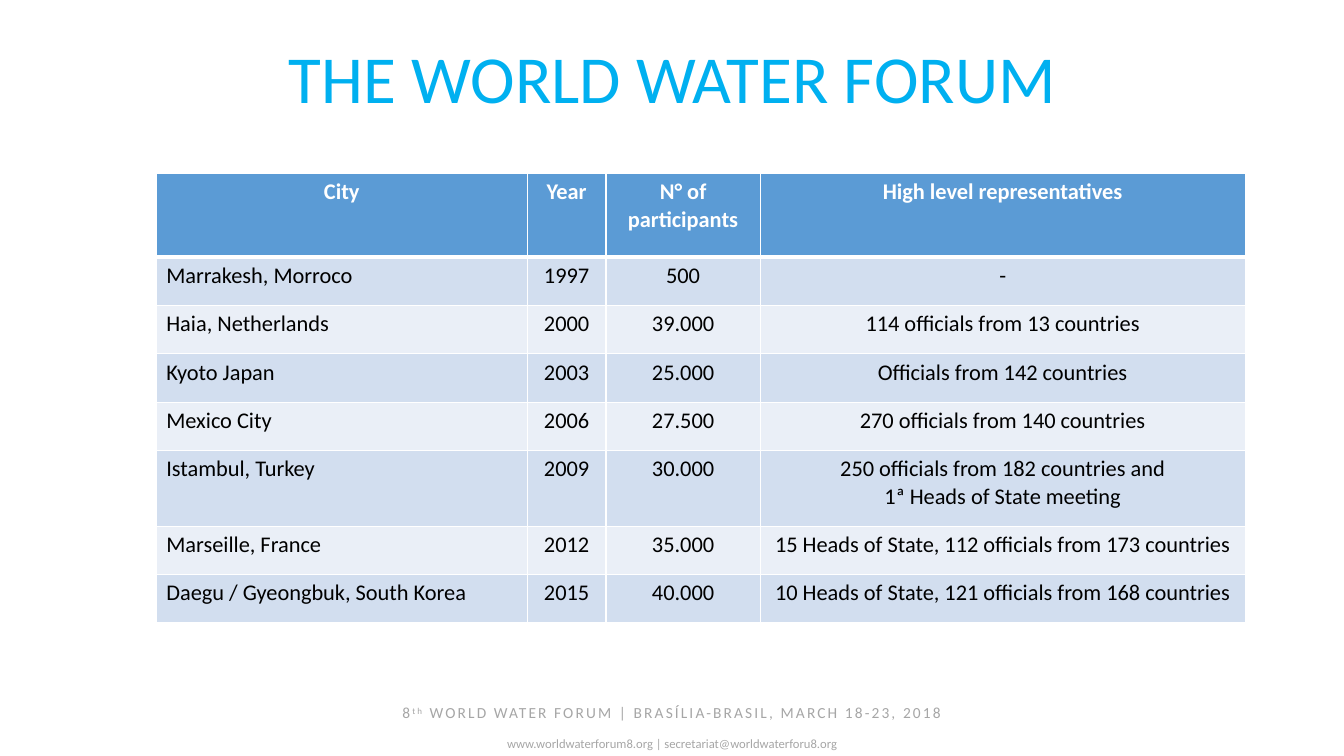
from dataclasses import dataclass

from lxml.etree import SubElement
from pptx import Presentation
from pptx.dml.color import RGBColor
from pptx.enum.text import MSO_ANCHOR as Anchor, PP_ALIGN as Align
from pptx.oxml.ns import qn
from pptx.util import Inches, Pt

COLORS = {
    "title": "00B0F0",
    "header": "5B9BD5",
    "dark_band": "D2DEEF",
    "light_band": "EAEFF7",
    "white": "FFFFFF",
    "black": "000000",
    "footer": "A6A6A6",
}
COLUMN_WIDTHS = (3.68, 0.78, 1.53, 4.81)
HEADINGS = ("City", "Year", "N° of participants", "High level representatives")
HEADER_HEIGHT = 0.83


@dataclass(frozen=True)
class Forum:
    city: str
    year: str
    participants: str
    representatives: str
    height: float = 0.48


FORUMS = (
    Forum("Marrakesh, Morroco", "1997", "500", "-"),
    Forum("Haia, Netherlands", "2000", "39.000", "114 officials from 13 countries"),
    Forum("Kyoto Japan", "2003", "25.000", "Officials from 142 countries"),
    Forum("Mexico City", "2006", "27.500", "270 officials from 140 countries"),
    Forum("Istambul, Turkey", "2009", "30.000",
          "250 officials from 182 countries and\n1ª Heads of State meeting", 0.75),
    Forum("Marseille, France", "2012", "35.000",
          "15 Heads of State, 112 officials from 173 countries"),
    Forum("Daegu / Gyeongbuk, South Korea", "2015", "40.000",
          "10 Heads of State, 121 officials from 168 countries"),
)


def add_run(paragraph, text: str, *, size: float, color: str, bold: bool = False,
            spacing: float = 0, baseline: int = 0) -> None:
    run = paragraph.add_run()
    run.text = text
    run.font.name = "Calibri"
    run.font.size = Pt(size)
    run.font.bold = bold
    run.font.color.rgb = RGBColor.from_string(COLORS[color])
    properties = run._r.get_or_add_rPr()
    if spacing:
        properties.set("spc", str(round(spacing * 100)))
    if baseline:
        properties.set("baseline", str(baseline * 1000))


def add_text_frame(slide, left: float, top: float, width: float, height: float):
    box = slide.shapes.add_textbox(Inches(left), Inches(top), Inches(width), Inches(height))
    box.text_frame.word_wrap = True
    box.text_frame.vertical_anchor = Anchor.TOP
    box.text_frame.paragraphs[0].alignment = Align.CENTER
    return box.text_frame


def add_border(cell, side: str, width: float) -> None:
    line = SubElement(cell._tc.get_or_add_tcPr(), qn(f"a:ln{side}"), w=str(Pt(width)))
    fill = SubElement(line, qn("a:solidFill"))
    SubElement(fill, qn("a:srgbClr"), val=COLORS["white"])


def fill_cell(cell, text: str, *, fill: str, color: str, align: Align,
              bold: bool = False, top: float = 1, bottom: float = 1) -> None:
    for side, width in (("L", 1), ("R", 1), ("T", top), ("B", bottom)):
        add_border(cell, side, width)
    cell.fill.solid()
    cell.fill.fore_color.rgb = RGBColor.from_string(COLORS[fill])
    cell.vertical_anchor = Anchor.TOP
    for index, line in enumerate(text.split("\n")):
        frame = cell.text_frame
        paragraph = frame.add_paragraph() if index else frame.paragraphs[0]
        paragraph.alignment = align
        add_run(paragraph, line, size=16, color=color, bold=bold)


def add_forum_table(slide) -> None:
    heights = (HEADER_HEIGHT, *(forum.height for forum in FORUMS))
    table = slide.shapes.add_table(
        len(heights), len(COLUMN_WIDTHS), Inches(1.55), Inches(1.72),
        Inches(sum(COLUMN_WIDTHS)), Inches(sum(heights))).table
    for column, width in zip(table.columns, COLUMN_WIDTHS):
        column.width = Inches(width)
    for row, height in zip(table.rows, heights):
        row.height = Inches(height)
    for column, heading in enumerate(HEADINGS):
        fill_cell(table.cell(0, column), heading, fill="header", color="white",
                  align=Align.CENTER, bold=True, bottom=3)
    for row, forum in enumerate(FORUMS, start=1):
        values = (forum.city, forum.year, forum.participants, forum.representatives)
        for column, value in enumerate(values):
            fill_cell(table.cell(row, column), value,
                      fill="dark_band" if row % 2 else "light_band", color="black",
                      align=Align.CENTER if column else Align.LEFT,
                      top=3 if row == 1 else 1)


def add_footer(slide) -> None:
    frame = add_text_frame(slide, 0, 6.93, 13.33, 0.57)
    event = frame.paragraphs[0]
    for text, baseline in (("8", 0), ("th", 30),
                           (" WORLD WATER FORUM | BRASÍLIA-BRASIL, MARCH 18-23, 2018", 0)):
        add_run(event, text, size=11, color="footer", spacing=1.5, baseline=baseline)
    contact = frame.add_paragraph()
    contact.alignment = Align.CENTER
    contact.space_before = Pt(9.8)
    add_run(contact, "www.worldwaterforum8.org | secretariat@worldwaterforu8.org",
            size=9, color="footer")


def add_title(slide) -> None:
    title = add_text_frame(slide, 0.92, 0.4, 11.5, 1.45).paragraphs[0]
    title.line_spacing = 0.9
    add_run(title, "THE WORLD WATER FORUM", size=48, color="title")


def main() -> None:
    presentation = Presentation()
    presentation.slide_width = Inches(13.33)
    presentation.slide_height = Inches(7.5)
    slide = presentation.slides.add_slide(presentation.slide_layouts[6])
    add_footer(slide)
    add_title(slide)
    add_forum_table(slide)
    presentation.save("out.pptx")


if __name__ == "__main__":
    main()
